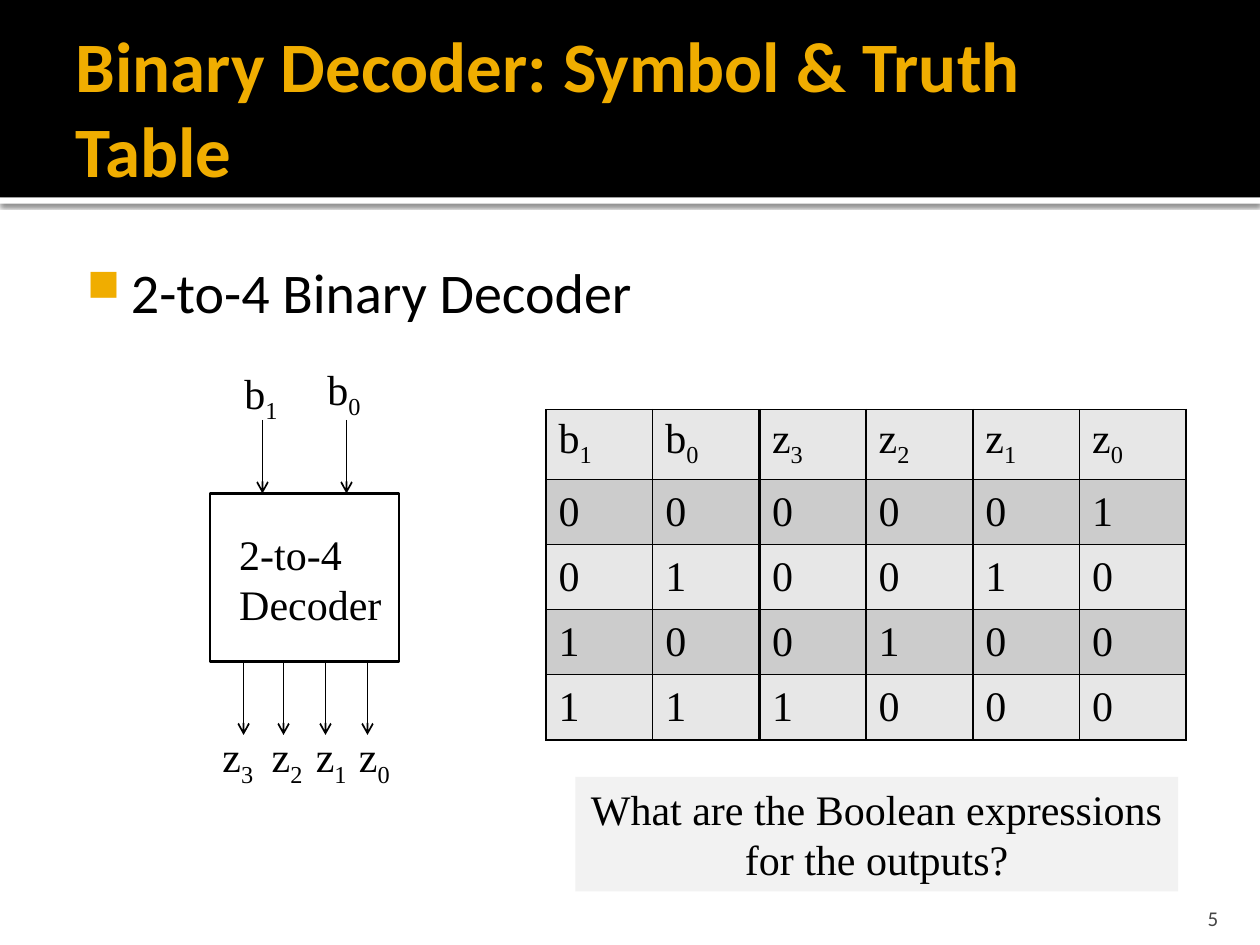
import pptx
import pptx.util
import pptx.dml.color
import pptx.enum.shapes
import pptx.enum.text
import pptx.oxml
import pptx.oxml.ns

COLUMNS, ROWS = 120, 90
WIDTH, HEIGHT = pptx.util.Inches(10), pptx.util.Inches(7.5)
SERIF, SANS = "Times New Roman", "Calibri"
BLACK, WHITE, GOLD = "000000", "FFFFFF", "F0AD00"
LIGHT_BAND, DARK_BAND = "E7E7E7", "CCCCCC"
ANCHOR = pptx.enum.text.MSO_ANCHOR
ALIGN = pptx.enum.text.PP_ALIGN
TRUTH_TABLE = [
    ["b1", "b0", "z3", "z2", "z1", "z0"],
    ["0", "0", "0", "0", "0", "1"],
    ["0", "1", "0", "0", "1", "0"],
    ["1", "0", "0", "1", "0", "0"],
    ["1", "1", "1", "0", "0", "0"],
]
INPUT_ARROWS = [25, 33]
OUTPUT_ARROWS = [23.2, 27, 31, 35]
SIGNALS = [("b1", 22.1, 34.4), ("b0", 30, 34), ("z3", 20, 69),
           ("z2", 24.7, 69), ("z1", 28.9, 69), ("z0", 33, 69)]


def place(column, row):
    return int(WIDTH * column / COLUMNS), int(HEIGHT * row / ROWS)


def color(value):
    return pptx.dml.color.RGBColor.from_string(value)


def paint(fill, value):
    fill.solid()
    fill.fore_color.rgb = color(value)


def set_format(target, values):
    for key, value in values.items():
        setattr(target, key, value)


def add_xml(parent, tag, attributes="", content=""):
    namespace = pptx.oxml.ns.nsdecls("a")
    parent.append(pptx.oxml.parse_xml(
        f"<a:{tag} {namespace} {attributes}>{content}</a:{tag}>"))


def add_run(paragraph, text, size, font=SERIF, ink=BLACK, bold=False):
    run = paragraph.add_run()
    run.text = text
    set_format(run.font, {"size": pptx.util.Pt(size), "name": font, "bold": bold})
    run.font.color.rgb = color(ink)
    return run


def add_signal(paragraph, signal):
    add_run(paragraph, signal[0], 24)
    if signal[1:]:
        index = add_run(paragraph, signal[1:], 24)
        index.font._element.set("baseline", "-25000")


def add_text(slide, box, lines, size=24, font=SERIF, ink=BLACK,
             align=ALIGN.LEFT, frame_format=None):
    label = slide.shapes.add_textbox(*place(*box[:2]), *place(*box[2:]))
    set_format(label.text_frame, {"word_wrap": False, **(frame_format or {})})
    for number, line in enumerate(lines):
        paragraphs = label.text_frame.paragraphs
        paragraph = label.text_frame.add_paragraph() if number else paragraphs[0]
        paragraph.alignment = align
        add_run(paragraph, line, size, font, ink)
    return label


def add_rectangle(slide, box, fill=None, outline=None):
    kind = pptx.enum.shapes.MSO_SHAPE.RECTANGLE
    rectangle = slide.shapes.add_shape(kind, *place(*box[:2]), *place(*box[2:]))
    rectangle.shadow.inherit = False
    if fill:
        paint(rectangle.fill, fill)
    else:
        rectangle.fill.background()
    if outline:
        paint(rectangle.line.fill, BLACK)
        rectangle.line.width = pptx.util.Pt(outline)
    else:
        rectangle.line.fill.background()
    return rectangle


def add_arrow(slide, column, top, bottom):
    kind = pptx.enum.shapes.MSO_CONNECTOR.STRAIGHT
    arrow = slide.shapes.add_connector(kind, *place(column, top), *place(column, bottom))
    paint(arrow.line.fill, BLACK)
    arrow.line.width = pptx.util.Pt(1)
    add_xml(arrow.line._get_or_add_ln(), "tailEnd", 'type="arrow"')
    add_xml(arrow._element.spPr, "effectLst")


def add_header(slide):
    rule = add_rectangle(slide, (0, 18.8, COLUMNS, 0.6), WHITE)
    shadow = rule._element.spPr.find(pptx.oxml.ns.qn("a:effectLst"))
    add_xml(shadow, "outerShdw",
            'blurRad="31750" dist="10160" dir="5400000" algn="tl" rotWithShape="0"',
            '<a:srgbClr val="000000"><a:alpha val="60000"/></a:srgbClr>')
    add_rectangle(slide, (0, 0, COLUMNS, 18.8), BLACK)
    title = slide.shapes.title
    slide.shapes._spTree.append(title._element)
    title.left, title.top = place(6, 2)
    title.width, title.height = place(108, 16.4)
    inset = pptx.util.Inches(0.05)
    set_format(title.text_frame, {
        "margin_left": 2 * inset, "margin_right": inset, "margin_top": inset,
        "margin_bottom": inset, "vertical_anchor": ANCHOR.MIDDLE,
        "word_wrap": True, "auto_size": pptx.enum.text.MSO_AUTO_SIZE.NONE})
    heading = title.text_frame.paragraphs[0]
    heading.alignment = ALIGN.LEFT
    add_run(heading, "Binary Decoder: Symbol & Truth Table", 40.5, SANS, GOLD, True)


def add_topic(slide):
    topic = add_text(slide, (6, 23.3, 59, 9.7), ["2-to-4 Binary Decoder"], 32, SANS,
                     frame_format={"word_wrap": True,
                                   "margin_left": pptx.util.Inches(0.06),
                                   "margin_top": pptx.util.Inches(0.1)})
    properties = topic.text_frame.paragraphs[0]._p.get_or_add_pPr()
    properties.set("marL", str(pptx.util.Inches(0.48)))
    properties.set("indent", str(pptx.util.Inches(-0.35)))
    add_xml(properties, "buClr", content=f'<a:srgbClr val="{GOLD}"/>')
    add_xml(properties, "buSzPct", 'val="80000"')
    add_xml(properties, "buChar", 'char="■"')


def add_decoder(slide):
    add_rectangle(slide, (20, 47, 18, 16), outline=1.5)
    for column in INPUT_ARROWS:
        add_arrow(slide, column, 40, 47)
    for column in OUTPUT_ARROWS:
        add_arrow(slide, column, 63, 70)
    for signal, column, row in SIGNALS:
        label = add_text(slide, (column, row, 5.6, 6), [])
        add_signal(label.text_frame.paragraphs[0], signal)
    add_text(slide, (21.6, 49.7, 16, 10.9), ["2-to-4", "Decoder"])


def add_borders(cell, column):
    thick = {1: "R", 2: "L"}.get(column)
    for side in "LRTB":
        width = pptx.util.Pt(2.25 if side == thick else 1)
        add_xml(cell._tc.get_or_add_tcPr(), f"ln{side}", f'w="{width}"',
                f'<a:solidFill><a:srgbClr val="{BLACK}"/></a:solidFill>')


def add_truth_table(slide):
    row_count, column_count = len(TRUTH_TABLE), len(TRUTH_TABLE[0])
    frame = slide.shapes.add_table(row_count, column_count,
                                   *place(52, 39), *place(61, 31))
    set_format(frame.table, {"first_row": False, "horz_banding": False})
    for row, signals in enumerate(TRUTH_TABLE):
        for column, signal in enumerate(signals):
            cell = frame.table.cell(row, column)
            add_borders(cell, column)
            paint(cell.fill, DARK_BAND if row % 2 else LIGHT_BAND)
            cell.vertical_anchor = ANCHOR.MIDDLE if row else ANCHOR.TOP
            add_signal(cell.text_frame.paragraphs[0], signal)


def add_question(slide):
    question = add_text(slide, (54.8, 74, 57.4, 10.9),
                        ["What are the Boolean expressions ", "for the outputs?"],
                        align=ALIGN.CENTER)
    paint(question.fill, "F2F2F2")


def main():
    deck = pptx.Presentation()
    set_format(deck, {"slide_width": WIDTH, "slide_height": HEIGHT})
    slide = deck.slides.add_slide(deck.slide_layouts[5])
    add_header(slide)
    add_topic(slide)
    add_text(slide, (107.6, 85, 9.6, 3.6), ["5"], 12, SANS, "454545", ALIGN.RIGHT,
             {"word_wrap": True, "vertical_anchor": ANCHOR.BOTTOM, "margin_bottom": 0})
    add_decoder(slide)
    add_truth_table(slide)
    add_question(slide)
    deck.save("out.pptx")


if __name__ == "__main__":
    main()
